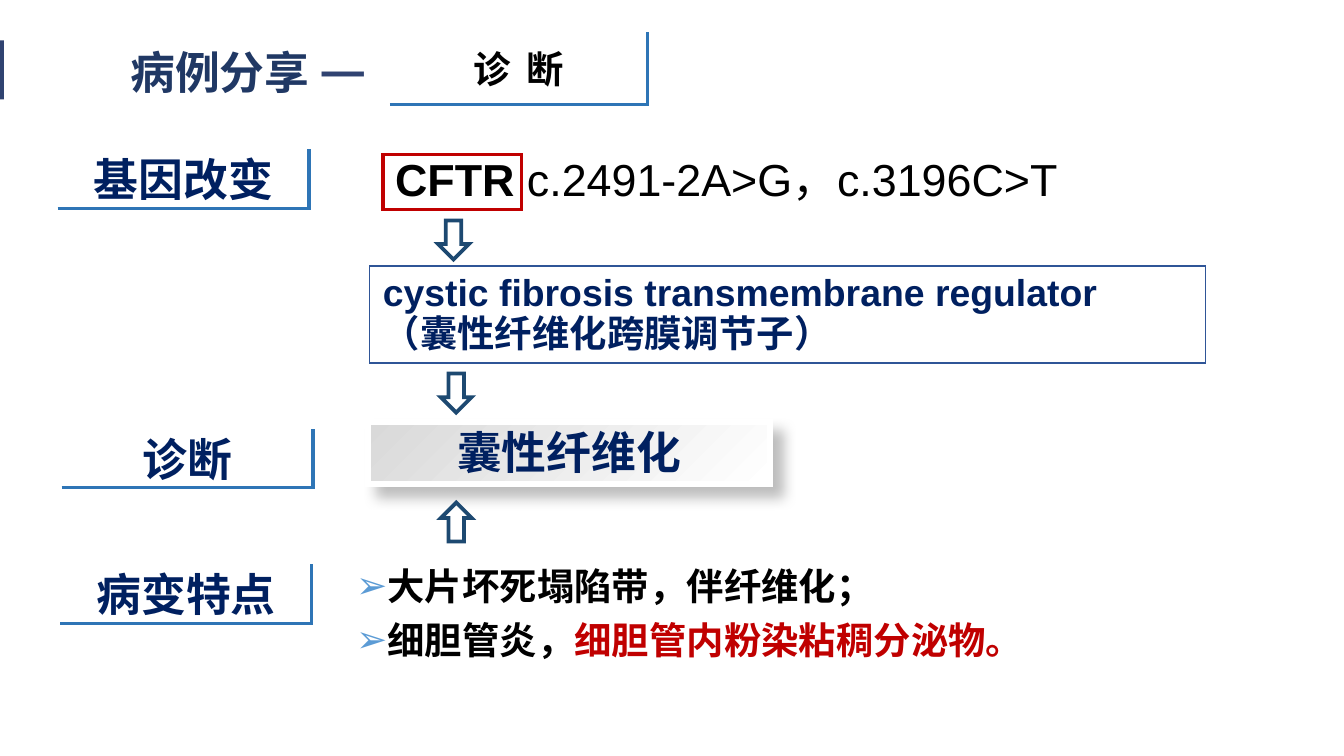
from lxml.etree import SubElement
from pptx import Presentation
from pptx.dml.color import RGBColor
from pptx.enum.shapes import MSO_SHAPE as Shape
from pptx.enum.text import MSO_ANCHOR as Anchor, MSO_AUTO_SIZE as AutoSize, PP_ALIGN as Align
from pptx.oxml.ns import qn
from pptx.util import Inches, Pt

COLORS = {
    "white": "FFFFFF", "black": "000000", "title": "203864", "accent": "304371",
    "navy": "002060", "red": "C00000", "corner": "2E75B6", "arrow": "1D4971",
    "frame": "2F5597", "bullet": "5B9BD5", "grey": "D9D9D9",
}
CJK = "Noto Sans CJK SC"
TITLE = "病例分享"
LABELS = [
    ("诊 断", (2.9, 0.24, 1.92, 0.54), 20, "black", CJK),
    ("基因改变", (0.43, 1.11, 1.87, 0.44), 24, "navy", "Arial"),
    ("诊断", (0.46, 3.19, 1.87, 0.44), 24, "navy", "Arial"),
    ("病变特点", (0.45, 4.2, 1.87, 0.44), 24, "navy", "Arial"),
]
ARROWS = [(3.26, 1.64, 0), (3.28, 2.78, 0), (3.28, 3.74, 180)]
GENE = [[("CFTR", "black", True), (" c.2491-2A>G，c.3196C>T", "black", False)]]
PROTEIN = [
    [("cystic fibrosis transmembrane regulator", "navy", True)],
    [("（囊性纤维化跨膜调节子）", "navy", True)],
]
DIAGNOSIS = [[("囊性纤维化", "navy", True)]]
FEATURES = [
    [("大片坏死塌陷带，伴纤维化；", "black", True)],
    [("细胆管炎，", "black", True), ("细胆管内粉染粘稠分泌物。", "red", True)],
]


def color(name):
    return RGBColor.from_string(COLORS[name])


def place(shape, box):
    shape.left, shape.top, shape.width, shape.height = map(Inches, box)


def add_bullet(paragraph):
    properties = paragraph._p.get_or_add_pPr()
    properties.set("marL", str(Inches(0.23)))
    properties.set("indent", str(-Inches(0.23)))
    bullet_color = SubElement(properties, qn("a:buClr"))
    SubElement(bullet_color, qn("a:srgbClr"), val=COLORS["bullet"])
    SubElement(properties, qn("a:buChar"), char="➢")


def write(shape, paragraphs, size, font="Arial", insets=(0.1, 0.05, 0.1, 0.05), align=Align.LEFT,
          anchor=Anchor.TOP, spacing=None, after=0, bullets=False, wrap=True):
    frame = shape.text_frame
    frame.auto_size, frame.word_wrap, frame.vertical_anchor = AutoSize.NONE, wrap, anchor
    frame.margin_left, frame.margin_top, frame.margin_right, frame.margin_bottom = map(Inches, insets)
    frame.text = "\n".join("".join(text for text, *_ in runs) for runs in paragraphs)
    for paragraph, runs in zip(frame.paragraphs, paragraphs):
        paragraph.text = ""
        if bullets:
            add_bullet(paragraph)
        paragraph.alignment = align
        paragraph.space_before, paragraph.space_after = Pt(0), Pt(after)
        if spacing:
            paragraph.line_spacing = Pt(spacing)
        for text, color_name, bold in runs:
            run = paragraph.add_run()
            run.text = text
            run.font.size, run.font.bold, run.font.name = Pt(size), bold, font
            run.font.color.rgb = color(color_name)
            SubElement(run._r.get_or_add_rPr(), qn("a:ea"), typeface=CJK)


def style(shape, line=None, width=1, fill=None):
    shape.shadow.inherit = False
    if fill:
        shape.fill.solid()
        shape.fill.fore_color.rgb = color(fill)
    else:
        shape.fill.background()
    if line:
        shape.line.color.rgb = color(line)
        shape.line.width = Pt(width)
        SubElement(shape._element.spPr.find(qn("a:ln")), qn("a:miter"), lim="800000")
    else:
        shape.line.fill.background()


def add_box(slide, kind, box, **look):
    shape = slide.shapes.add_shape(kind, *map(Inches, box))
    style(shape, **look)
    return shape


def add_label(slide, text, box, size, color_name, font):
    left, top, width, height = box
    right, bottom = Inches(left + width), Inches(top + height)
    builder = slide.shapes.build_freeform(Inches(left), bottom)
    builder.add_line_segments([(right, bottom), (right, Inches(top))], close=False)
    shape = builder.convert_to_shape()
    style(shape, "corner", 1.75, "white")
    write(shape, [[(text, color_name, True)]], size, font, (0, 0, 0, 0), Align.CENTER, Anchor.MIDDLE)
    return shape


def add_diagnosis(slide):
    shape = add_box(slide, Shape.RECTANGLE, (2.74, 3.14, 2.99, 0.46), line="white", width=3)
    shape.fill.gradient()
    shape.fill.gradient_angle = 315
    for stop, name in zip(shape.fill.gradient_stops, ("grey", "white")):
        stop.color.rgb = color(name)
    effects = shape._element.spPr.find(qn("a:effectLst"))
    shadow = SubElement(effects, qn("a:outerShdw"), blurRad=str(Pt(7)), dist=str(Pt(8)),
                        dir="2700000", algn="tl", rotWithShape="0")
    shade = SubElement(shadow, qn("a:srgbClr"), val=COLORS["black"])
    SubElement(shade, qn("a:alpha"), val="25000")
    write(shape, DIAGNOSIS, 24, align=Align.CENTER, anchor=Anchor.MIDDLE, spacing=27)


def main():
    """Build the case-sharing slide on diagnosis."""
    presentation = Presentation()
    presentation.slide_width = Inches(10)
    presentation.slide_height = presentation.slide_width * 9 // 16
    slide = presentation.slides.add_slide(presentation.slide_layouts[1])
    title, features = slide.placeholders
    place(title, (0.91, 0.3, 1.86, 0.46))
    write(title, [[(TITLE, "title", True)]], 24, CJK, (0.06, 0.03, 0.06, 0.03))
    place(features, (2.58, 4.16, 5.14, 0.81))
    write(features, FEATURES, 20, CJK, (0.07, 0.04, 0.07, 0.04), spacing=23.2, after=6,
          bullets=True, wrap=False)

    add_box(slide, Shape.RECTANGLE, (-0.01, 0.3, 0.04, 0.44), fill="accent")
    dash = slide.shapes.add_textbox(*map(Inches, (2.28, 0.23, 0.66, 0.57)))
    write(dash, [[("—", "accent", True)]], 28, CJK)
    labels = [add_label(slide, *label) for label in LABELS]
    labels[0].text_frame.paragraphs[0].runs[0]._r.get_or_add_rPr().set("spc", "200")

    gene = slide.shapes.add_textbox(*map(Inches, (2.65, 1.08, 6.17, 0.5)))
    write(gene, GENE, 24, insets=(0.29, 0.05, 0.1, 0.05))
    add_box(slide, Shape.RECTANGLE, (2.85, 1.15, 1.03, 0.41), line="red", width=1.75)
    protein = add_box(slide, Shape.RECTANGLE, (2.75, 1.98, 6.22, 0.72), line="frame", width=0.75)
    write(protein, PROTEIN, 20, spacing=22)
    add_diagnosis(slide)
    for left, top, rotation in ARROWS:
        arrow = add_box(slide, Shape.DOWN_ARROW, (left, top, 0.23, 0.29), line="arrow", width=2)
        arrow.rotation = rotation
    presentation.save("out.pptx")


if __name__ == "__main__":
    main()
